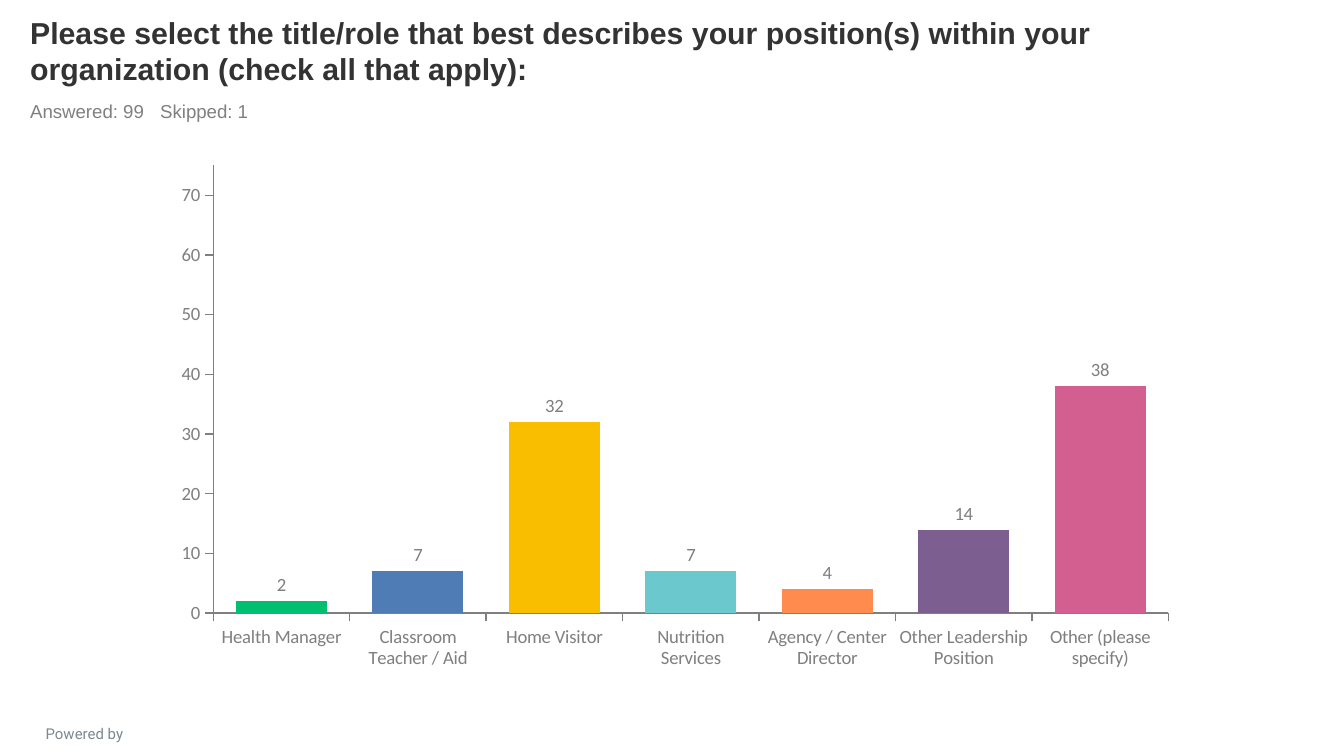
from lxml import etree
from pptx import Presentation
from pptx.chart.data import CategoryChartData
from pptx.dml.color import RGBColor
from pptx.enum import chart as charts, text
from pptx.oxml.ns import qn
from pptx.util import Pt

EMU_PER_PX = 914400 / 134.4
WIDTH, HEIGHT = 1344, 756

TITLE_INK = RGBColor(0x33, 0x33, 0x33)
SUBTITLE_INK = RGBColor(0x80, 0x80, 0x80)
FOOTER_INK = RGBColor(0x7C, 0x87, 0x8E)
AXIS_GREY = RGBColor(0x7F, 0x7F, 0x7F)
GREEN = RGBColor(0x00, 0xBF, 0x6F)
BLUE = RGBColor(0x50, 0x7C, 0xB6)
YELLOW = RGBColor(0xF9, 0xBE, 0x00)
TEAL = RGBColor(0x6B, 0xC8, 0xCD)
ORANGE = RGBColor(0xFF, 0x8B, 0x4F)
PURPLE = RGBColor(0x7D, 0x5E, 0x90)
PINK = RGBColor(0xD2, 0x5F, 0x90)

ROLES = [
    ("Health Manager", 2, GREEN),
    ("Classroom Teacher / Aid", 7, BLUE),
    ("Home Visitor", 32, YELLOW),
    ("Nutrition Services", 7, TEAL),
    ("Agency / Center Director", 4, ORANGE),
    ("Other Leadership Position", 14, PURPLE),
    ("Other (please specify)", 38, PINK),
]


def px(length):
    return round(length * EMU_PER_PX)


class SurveySlide:
    chart_font = "Calibri"
    chart_size = 10

    def __init__(self, deck):
        self.page = deck.slides.add_slide(deck.slide_layouts[6])

    def style(self, font, name, size, color, bold=False):
        font.name, font.size, font.bold = name, Pt(size), bold
        font.color.rgb = color

    def text(self, area, words, name, size, color, bold=False,
             align=text.PP_ALIGN.LEFT, anchor=text.MSO_ANCHOR.TOP, tab=None):
        box = self.page.shapes.add_textbox(*map(px, area))
        frame = box.text_frame
        frame.word_wrap = True
        frame.vertical_anchor = anchor
        para = frame.paragraphs[0]
        para.alignment = align
        if tab:
            stops = etree.SubElement(para._p.get_or_add_pPr(), qn("a:tabLst"))
            etree.SubElement(stops, qn("a:tab"), pos=str(px(tab)), algn="l")
        span = para.add_run()
        span.text = words
        self.style(span.font, name, size, color, bold)

    def axis(self, axis):
        axis.has_major_gridlines = False
        axis.major_tick_mark = charts.XL_TICK_MARK.OUTSIDE
        axis.minor_tick_mark = charts.XL_TICK_MARK.NONE
        axis.format.line.color.rgb = AXIS_GREY
        axis.format.line.width = Pt(0.75)
        self.style(axis.tick_labels.font, self.chart_font, self.chart_size, AXIS_GREY)

    def columns(self, area, rows, top, step):
        names, values, colors = zip(*rows)
        data = CategoryChartData(number_format="0")
        data.categories = names
        data.add_series("Series 1", values)
        chart = self.page.shapes.add_chart(
            charts.XL_CHART_TYPE.COLUMN_CLUSTERED, *map(px, area), data).chart
        chart.has_legend = chart.has_title = False
        self.style(chart.font, self.chart_font, 18, TITLE_INK)

        # Axes
        self.axis(chart.category_axis)
        chart.category_axis.tick_label_position = charts.XL_TICK_LABEL_POSITION.LOW
        scale = chart.value_axis
        self.axis(scale)
        scale.minimum_scale, scale.maximum_scale = 0, top
        scale.major_unit = step
        scale.tick_labels.number_format = "0"
        scale.tick_labels.number_format_is_linked = False

        # Columns, one colour per role
        plot = chart.plots[0]
        plot.gap_width, plot.overlap = 50, 100
        plot.vary_by_categories = False
        series = plot.series[0]
        series.invert_if_negative = False
        for index, color in enumerate(colors):
            fill = series.points[index].format.fill
            fill.solid()
            fill.fore_color.rgb = color

        # Value labels
        labels = series.data_labels
        labels.show_value = True
        labels.number_format = "0"
        labels.number_format_is_linked = False
        labels.position = charts.XL_LABEL_POSITION.OUTSIDE_END
        self.style(labels.font, self.chart_font, self.chart_size, AXIS_GREY)


def main():
    deck = Presentation()
    deck.slide_width, deck.slide_height = px(WIDTH), px(HEIGHT)
    slide = SurveySlide(deck)

    # Footer
    slide.text((7, 718, 155, 24), "Powered by", "Roboto", 8, FOOTER_INK,
               align=text.PP_ALIGN.CENTER)

    # Question and response counts
    slide.text((17, 12, 1210, 81),
               "Please select the title/role that best describes your position(s) "
               "within your organization (check all that apply):",
               "Arial", 16.2, TITLE_INK, bold=True, anchor=text.MSO_ANCHOR.BOTTOM)
    slide.text((17, 93, 1210, 35), "Answered: 99\tSkipped: 1", "Arial", 10,
               SUBTITLE_INK, tab=130)

    # Answers by role
    slide.columns((161, 155, 1028, 524), ROLES, top=75, step=10)

    deck.save("out.pptx")


if __name__ == "__main__":
    main()
